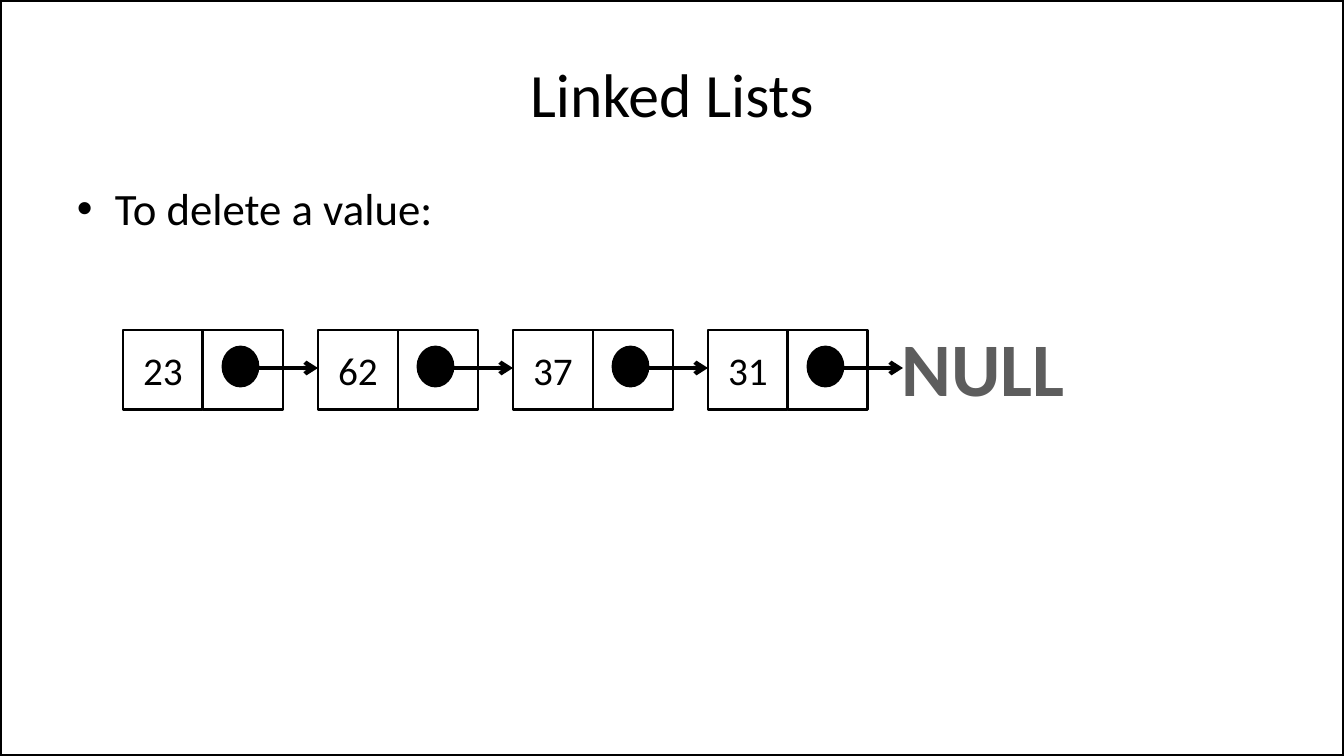
from lxml.etree import SubElement
from pptx import Presentation
from pptx.dml.color import RGBColor
from pptx.enum.shapes import MSO_CONNECTOR, MSO_SHAPE
from pptx.enum.text import MSO_ANCHOR, PP_ALIGN
from pptx.oxml.ns import qn
from pptx.util import Pt

PX = 914400 / 100.8
BLACK = "000000"
GREY = "5D5D5D"


def add_outline(kind, left, top, width, height, line_width, fill=None):
    """Add a black-lined shape, hollow unless a fill is given."""
    shape = page.shapes.add_shape(
        kind, *(round(n * PX) for n in (left, top, width, height)))
    shape.shadow.inherit = False
    if fill:
        shape.fill.solid()
        shape.fill.fore_color.rgb = RGBColor.from_string(fill)
    else:
        shape.fill.background()
    shape.line.color.rgb = RGBColor.from_string(BLACK)
    shape.line.width = Pt(line_width)
    return shape


def write(box, text, size, color=BLACK, bold=False, align=PP_ALIGN.CENTER,
          anchor=MSO_ANCHOR.MIDDLE, wrap=True):
    frame = box.text_frame
    frame.word_wrap = wrap
    frame.vertical_anchor = anchor
    para = frame.paragraphs[0]
    para.alignment = align
    span = para.add_run()
    span.text = text
    for name, value in {"name": "Calibri", "size": Pt(size), "bold": bold}.items():
        setattr(span.font, name, value)
    span.font.color.rgb = RGBColor.from_string(color)
    return para


deck = Presentation()
deck.slide_width = round(1344 * PX)
deck.slide_height = round(756 * PX)
page = deck.slides.add_slide(deck.slide_layouts[6])

add_outline(MSO_SHAPE.RECTANGLE, 0, 0, 1344, 756, 3)

# Text boxes
texts = [
    ((67, 30, 1210, 126), "Linked Lists", 44, {}),
    ((67, 176, 1210, 499), "To delete a value:", 32,
     {"align": PP_ALIGN.LEFT, "anchor": MSO_ANCHOR.TOP}),
    ((891, 316, 185, 102), "NULL", 54,
     {"color": GREY, "bold": True, "anchor": MSO_ANCHOR.TOP, "wrap": False}),
]
paras = {}
for place, text, size, options in texts:
    box = page.shapes.add_textbox(*(round(n * PX) for n in place))
    paras[text] = write(box, text, size, **options)

# Bullet with a hanging indent
item = paras["To delete a value:"]
item.space_before = Pt(4)
props = item._p.get_or_add_pPr()
indent = round(38 * PX)
props.set("marL", str(indent))
props.set("indent", str(-indent))
SubElement(props, qn("a:buFont"), typeface="Arial")
SubElement(props, qn("a:buChar"), char="•")

# List nodes: a value cell, a pointer cell, a dot and an arrow to the next node
CELL = 80
PITCH = 195
TOP = 330
ARROW_Y = 368
for index, value in enumerate(["23", "62", "37", "31"]):
    left = 123 + index * PITCH
    value_cell = add_outline(MSO_SHAPE.RECTANGLE, left, TOP, CELL, CELL, 2)
    write(value_cell, value, 28)
    add_outline(MSO_SHAPE.OVAL, left + 100, 347, 35, 39, 2, BLACK)
    arrow = page.shapes.add_connector(
        MSO_CONNECTOR.STRAIGHT,
        *(round(n * PX) for n in (left + 135, ARROW_Y, left + PITCH, ARROW_Y)))
    arrow.line.color.rgb = RGBColor.from_string(BLACK)
    arrow.line.width = Pt(3)
    SubElement(arrow.line._get_or_add_ln(), qn("a:tailEnd"), type="arrow")
    SubElement(arrow._element.spPr, qn("a:effectLst"))
    add_outline(MSO_SHAPE.RECTANGLE, left + CELL, TOP, CELL, CELL, 2)

deck.save("out.pptx")
